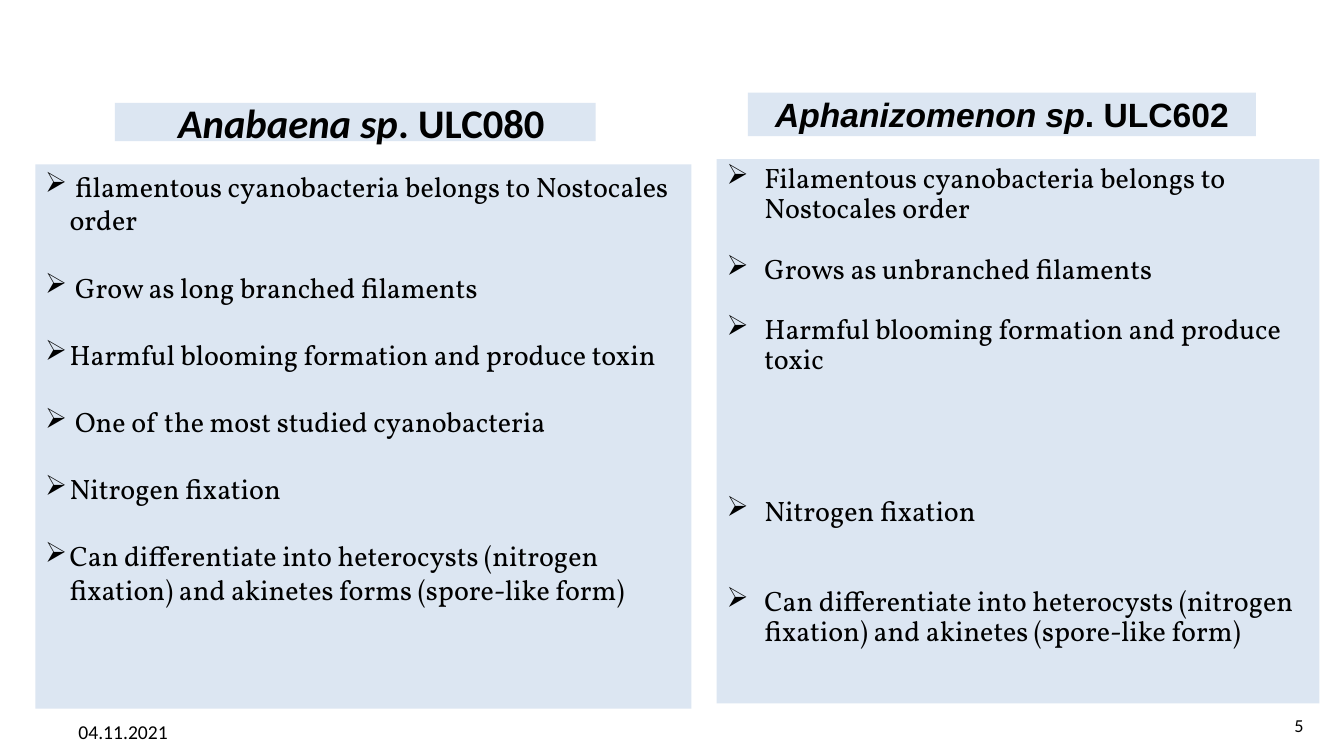
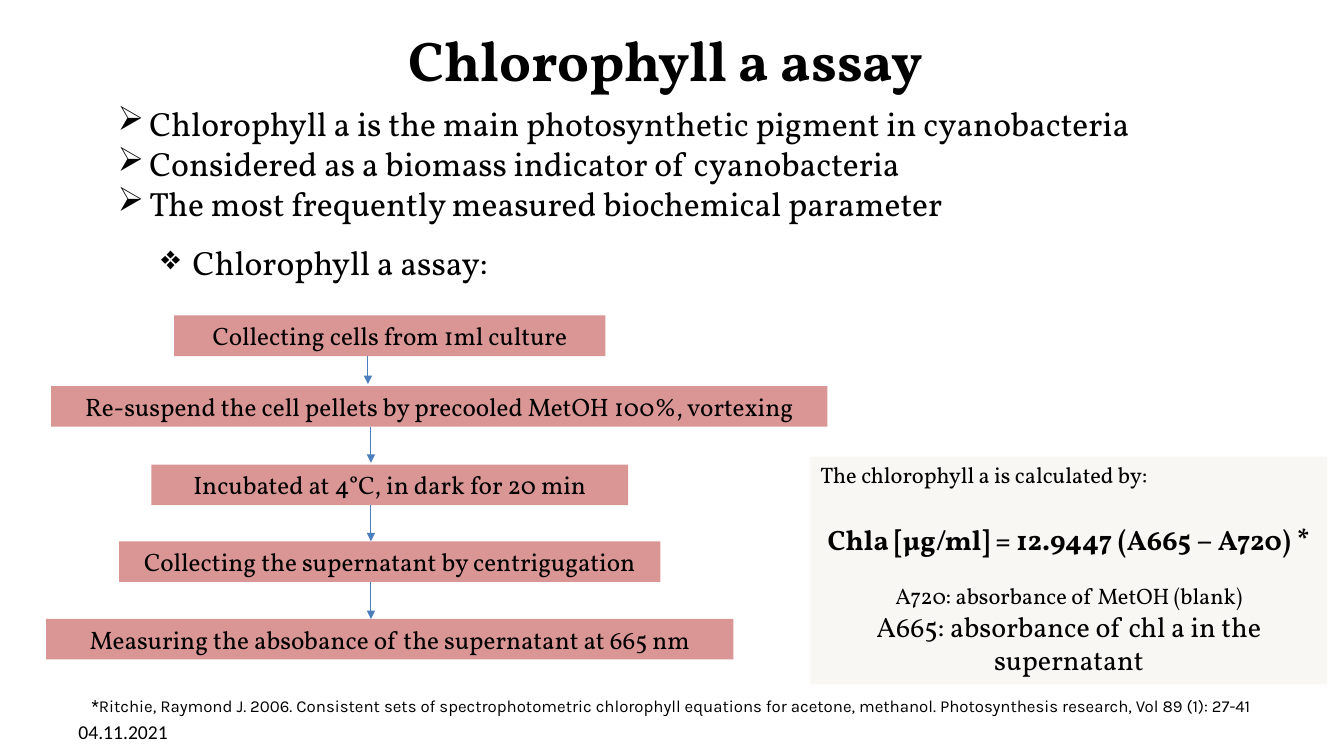
import dataclasses
import typing

import lxml.etree
import pptx
import pptx.dml.color
import pptx.enum.shapes
import pptx.enum.text
import pptx.oxml.ns
import pptx.shapes.base
import pptx.slide
import pptx.text.text
import pptx.util

RGB = pptx.dml.color.RGBColor
BLACK = RGB(0x00, 0x00, 0x00)
WHITE = RGB(0xFF, 0xFF, 0xFF)
PALE = RGB(0xDC, 0xE6, 0xF2)
ROSE = RGB(0xD9, 0x96, 0x94)
CREAM = RGB(0xF8, 0xF7, 0xF3)
BLUE = RGB(0x4B, 0x7E, 0xBC)

# The slide is a grid of 160 columns by 90 rows with square cells.
COLS, ROWS = 160, 90
CELL = pptx.util.Inches(7.5) / ROWS

Pt = pptx.util.Pt
qn = pptx.oxml.ns.qn
ALIGN = pptx.enum.text.PP_ALIGN
ANCHOR = pptx.enum.text.MSO_ANCHOR
Format = dict[str, typing.Any]

MID: Format = {"alignment": ALIGN.CENTER}
EVEN: Format = {"alignment": ALIGN.JUSTIFY}
TIGHT: Format = {"line_spacing": 0.9}


class Area(typing.NamedTuple):
    left: float
    top: float
    width: float
    height: float


@dataclasses.dataclass(frozen=True)
class Run:
    text: str
    font: Format = dataclasses.field(default_factory=dict)


@dataclasses.dataclass(frozen=True)
class Para:
    """Runs share the font; gap is the space before, in points."""
    runs: tuple[Run, ...]
    font: Format
    form: Format = dataclasses.field(default_factory=dict)
    gap: float = 0
    mark: str = ""
    hang: float = 0


@dataclasses.dataclass(frozen=True)
class Panel:
    """A heading over a list whose items are (gap, text) pairs."""
    head: Area
    title: str
    code: str
    font: Format
    inset: float
    body: Area
    form: Format
    hang: float
    items: tuple[tuple[float, str], ...]


@dataclasses.dataclass(frozen=True)
class Step:
    """A bar of the flow; the arrow below it runs down at axis."""
    text: str
    top: float
    width: float
    mid: float = 46.4
    axis: float = 44.16
    short: float = 0


def face(name: str, size: float, **more: typing.Any) -> Format:
    return {"name": name, "size": Pt(size), **more}


def serif(size: float, **more: typing.Any) -> Format:
    return face("Vollkorn", size, **more)


def grid(count: float) -> int:
    return round(count * CELL)


def apply(target: typing.Any, form: Format) -> None:
    for key, value in form.items():
        setattr(target, key, value)


def line(text: str, font: Format, form: Format | None = None,
         gap: float = 0, mark: str = "", hang: float = 0) -> Para:
    """A paragraph of a single run."""
    return Para((Run(text),), font, form or {}, gap, mark, hang)


def bullet(para: pptx.text.text._Paragraph, mark: str, hang: float) -> None:
    props = para._p.get_or_add_pPr()
    props.set("marL", str(grid(hang)))
    props.set("indent", str(-grid(hang)))
    lxml.etree.SubElement(props, qn("a:buChar")).set("char", mark)


def write(shape: typing.Any, paras: typing.Sequence[Para],
          frame: Format) -> None:
    text = shape.text_frame
    apply(text, {"word_wrap": True, "vertical_anchor": ANCHOR.TOP, **frame})
    for index, item in enumerate(paras):
        para = text.add_paragraph() if index else text.paragraphs[0]
        if item.mark:
            bullet(para, item.mark, item.hang)
        apply(para, {"alignment": ALIGN.LEFT, **item.form})
        if item.gap:
            para.space_before = Pt(item.gap)
        for part in item.runs:
            run = para.add_run()
            run.text = part.text
            apply(run.font, {**item.font, **part.font})
            run.font.color.rgb = BLACK


def box(slide: pptx.slide.Slide, area: Area, *paras: Para,
        fill: RGB | None = None, **frame: typing.Any) -> None:
    """A filled rectangle, or a plain text box when there is no fill."""
    place = [grid(side) for side in area]
    if fill is None:
        shape = slide.shapes.add_textbox(*place)
    else:
        kind = pptx.enum.shapes.MSO_SHAPE.RECTANGLE
        shape = slide.shapes.add_shape(kind, *place)
        shape.shadow.inherit = False
        shape.fill.solid()
        shape.fill.fore_color.rgb = fill
        shape.line.fill.background()
    write(shape, paras, frame)


def arrow(slide: pptx.slide.Slide, col: float, top: float, end: float) -> None:
    kind = pptx.enum.shapes.MSO_CONNECTOR.STRAIGHT
    link = slide.shapes.add_connector(
        kind, grid(col), grid(top), grid(col), grid(end))
    link.line.color.rgb = BLUE
    link.line.width = Pt(0.75)
    tail = lxml.etree.SubElement(link.line._get_or_add_ln(), qn("a:tailEnd"))
    tail.set("type", "triangle")
    lxml.etree.SubElement(link._element.spPr, qn("a:effectLst"))


def start(deck: typing.Any) -> pptx.slide.Slide:
    """A blank slide with the date in its footer."""
    slide = deck.slides.add_slide(deck.slide_layouts[6])
    slide.background.fill.solid()
    slide.background.fill.fore_color.rgb = WHITE
    box(slide, Area(8.16, 84.48, 19.68, 4.32),
        line("04.11.2021", face("Calibri", 14)), margin_top=grid(1.2))
    return slide


PANELS = (
    Panel(Area(13.68, 12.24, 57.24, 4.56), "Anabaena sp", ". ULC080",
          face("Calibri", 29), 2.64,
          Area(4.2, 19.56, 78.12, 64.8), {}, 2.9, (
              (0, " filamentous cyanobacteria belongs to Nostocales order"),
              (24, " Grow as long branched filaments"),
              (24, "Harmful blooming formation and produce toxin"),
              (24, " One of the most studied cyanobacteria"),
              (24, "Nitrogen fixation"),
              (24, "Can differentiate into heterocysts (nitrogen fixation) "
                   "and akinetes forms (spore-like form)"))),
    Panel(Area(89.04, 11.04, 60.48, 5.16), "Aphanizomenon sp", ". ULC602",
          face("Arial", 24), 1.2,
          Area(85.32, 18.96, 71.76, 64.8), TIGHT, 4.5, (
              (0, "Filamentous cyanobacteria belongs to Nostocales order"),
              (21.6, "Grows as unbranched filaments"),
              (21.6, "Harmful blooming formation and produce toxic"),
              (86.4, "Nitrogen fixation"),
              (43.2, "Can differentiate into heterocysts (nitrogen fixation) "
                     "and akinetes (spore-like form)"))),
)

POINTS = (
    "Chlorophyll a is the main photosynthetic pigment in cyanobacteria",
    "Considered as a biomass indicator of cyanobacteria",
    "The most frequently measured biochemical parameter",
)

STEPS = (
    Step("Collecting cells from 1ml culture", 37.56, 51.36,
         axis=43.8, short=0.24),
    Step("Re-suspend the cell pellets by precooled MetOH 100%, vortexing",
         45.96, 92.4, mid=52.3, short=0.24),
    Step("Incubated at 4°C, in dark for 20 min", 55.32, 56.76),
    Step("Collecting the supernatant by centrigugation", 64.44, 64.44),
    Step("Measuring the absobance of the supernatant at 665 nm",
         73.68, 81.84),
)
BAR = 4.84


def strains(deck: typing.Any) -> None:
    slide = start(deck)
    box(slide, Area(146.76, 84.48, 9.6, 4.32),
        line("5", face("Calibri", 13), {"alignment": ALIGN.RIGHT}))
    for panel in PANELS:
        name = Run(panel.title, {"italic": True})
        box(slide, panel.head,
            Para((name, Run(panel.code)), {**panel.font, "bold": True}, MID),
            fill=PALE, vertical_anchor=ANCHOR.MIDDLE,
            margin_left=grid(panel.inset))
        items = [line(text, serif(20), panel.form, gap, "➢", panel.hang)
                 for gap, text in panel.items]
        box(slide, panel.body, *items, fill=PALE)


def flow(slide: pptx.slide.Slide) -> None:
    for step in STEPS:
        left = step.mid - step.width / 2
        box(slide, Area(left, step.top, step.width, BAR),
            line(step.text, serif(18), MID), fill=ROSE)
    for step, after in zip(STEPS, STEPS[1:]):
        arrow(slide, step.axis, step.top + BAR, after.top - step.short)


def assay(deck: typing.Any) -> None:
    slide = start(deck)
    box(slide, Area(20.64, 2.4, 117.24, 9.24),
        line("Chlorophyll a assay", serif(40, bold=True), MID))
    box(slide, Area(12.84, 11.64, 136.8, 15.72),
        *(line(text, serif(24), EVEN, mark="➢", hang=3.75)
          for text in POINTS))
    box(slide, Area(18, 28.2, 48.72, 6),
        line("Chlorophyll a assay:", serif(24), mark="❖", hang=3.75))
    flow(slide)
    box(slide, Area(96.48, 54.36, 61.56, 27.12),
        line("The chlorophyll a is calculated by:", serif(16)),
        line("Chla [μg/ml] = 12.9447 (A665 − A720) *",
             serif(20, bold=True), MID, 24),
        line("A720: absorbance of MetOH (blank)", serif(16), MID, 19.2),
        line("A665: absorbance of chl a in the supernatant", serif(20), MID),
        fill=CREAM)
    cite = Run("Ritchie, Raymond J. 2006. Consistent sets of "
               "spectrophotometric chlorophyll equations for acetone, "
               "methanol. Photosynthesis research, Vol 89 (1): 27-41",
               {"name": "Karla"})
    box(slide, Area(6.12, 82.2, 147.72, 3.6),
        Para((Run("*"), cite), face("Roboto", 12), MID))


def main() -> None:
    deck = pptx.Presentation()
    deck.slide_width = grid(COLS)
    deck.slide_height = grid(ROWS)
    strains(deck)
    assay(deck)
    deck.save("out.pptx")


if __name__ == "__main__":
    main()
